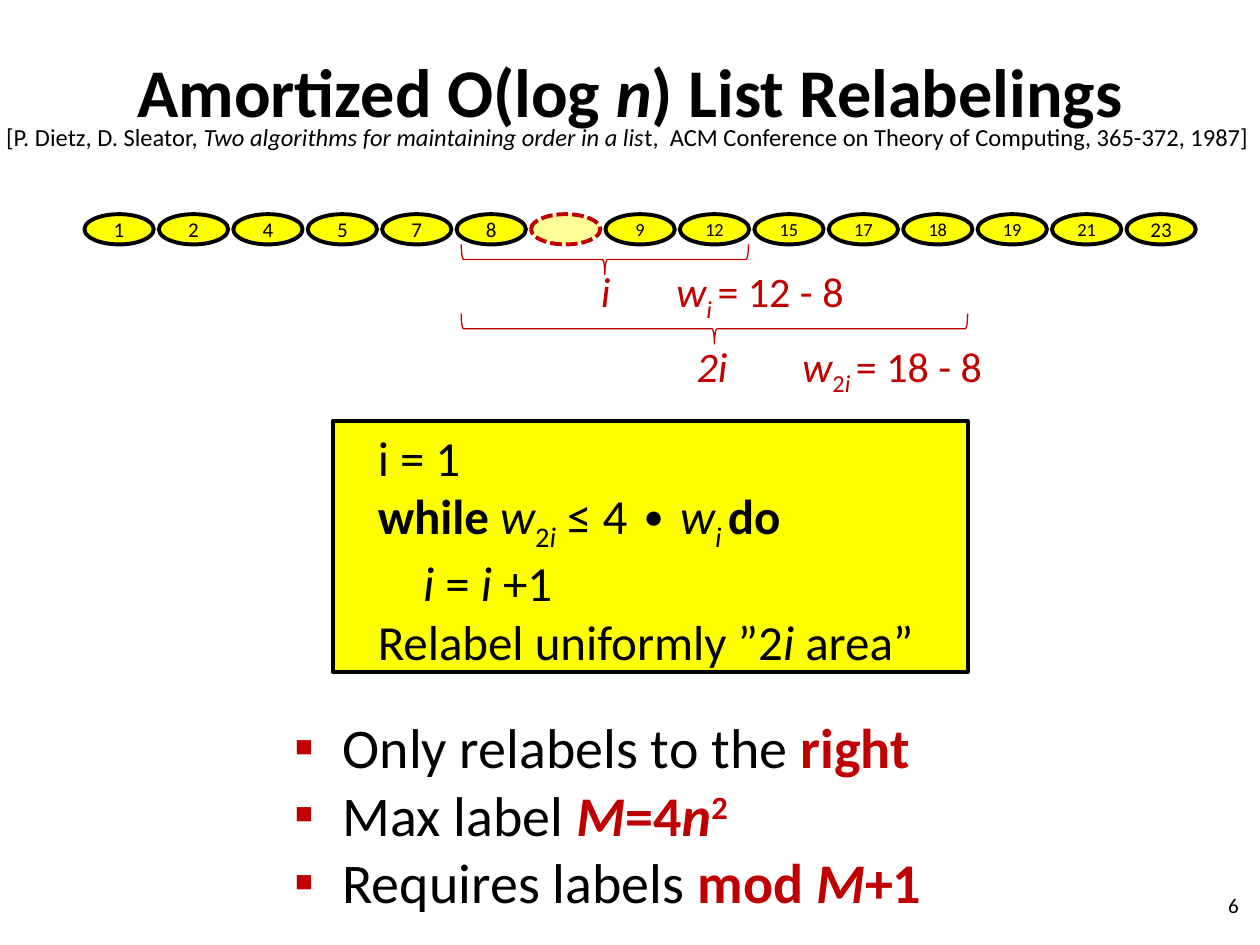
from lxml.etree import SubElement
from pptx import Presentation
from pptx.dml.color import RGBColor
from pptx.enum.dml import MSO_LINE
from pptx.enum.shapes import MSO_SHAPE as SHAPE
from pptx.enum.text import MSO_ANCHOR as ANCHOR, PP_ALIGN as ALIGN
from pptx.oxml.ns import qn
from pptx.util import Inches, Pt

BLACK, RED, YELLOW, PALE = "000000", "C00000", "FFFF00", "FFFF99"

prs = Presentation()
prs.slide_width, prs.slide_height = Inches(10), Inches(7.5)
shapes = prs.slides.add_slide(prs.slide_layouts[6]).shapes


def add_item(box, kind=None, fill=None, line=BLACK, weight=2.25):
    """Add a preset shape, or a text box when no kind is given."""
    box = [Inches(v) for v in box]
    if kind is None:
        sp = shapes.add_textbox(*box)
    else:
        sp = shapes.add_shape(kind, *box)
        sp.shadow.inherit = False
        sp.line.color.rgb = RGBColor.from_string(line)
        sp.line.width = Pt(weight)
        if fill:
            sp.fill.solid()
            sp.fill.fore_color.rgb = RGBColor.from_string(fill)
        else:
            sp.fill.background()
    sp.text_frame.word_wrap = True
    return sp


def write(sp, lines, size, align=ALIGN.LEFT, anchor=ANCHOR.TOP, color=BLACK):
    """Write lines of (text, marks) runs: b bold, i italic, r red, - sub, + super."""
    tf = sp.text_frame
    tf.vertical_anchor = anchor
    for n, runs in enumerate(lines):
        p = tf.add_paragraph() if n else tf.paragraphs[0]
        p.alignment = align
        for text, marks in runs:
            r = p.add_run()
            r.text = text
            r.font.name, r.font.size = "Calibri", Pt(size)
            r.font.bold, r.font.italic = "b" in marks, "i" in marks
            r.font.color.rgb = RGBColor.from_string(RED if "r" in marks else color)
            if "-" in marks or "+" in marks:
                shift = "-25000" if "-" in marks else "30000"
                r.font._element.set("baseline", shift)
    return tf.paragraphs


# Slide number, title and reference
write(add_item((7.6, 6.98, 2.33, 0.4)), [[("6", "")]], 12, ALIGN.RIGHT, ANCHOR.MIDDLE)
write(add_item((0, 0.36, 10, 0.71)),
      [[("Amortized O(log ", "b"), ("n", "bi"), (") List Relabelings", "b")]],
      39, ALIGN.CENTER, ANCHOR.MIDDLE)
write(add_item((-0.16, 0.92, 10.28, 1.26)),
      [[("[P. Dietz, D. Sleator, ", ""),
        ("Two algorithms for maintaining order in a lis", "i"),
        ("t,  ACM Conference on Theory of Computing, 365-372, 1987]", "")]],
      14, ALIGN.CENTER)

# Row of labelled list nodes, with one new node still unlabelled
LEFT, PITCH = 0.67, 8.27 / 14
labels = [1, 2, 4, 5, 7, 8, None, 9, 12, 15, 17, 18, 19, 21, 23]
for col, label in enumerate(labels):
    box = (LEFT + col * PITCH, 1.7, 0.55, 0.24)
    if label is None:
        sp = add_item(box, SHAPE.OVAL, PALE, RED)
        sp.line.dash_style = MSO_LINE.SQUARE_DOT
        continue
    sp = add_item(box, SHAPE.OVAL, YELLOW)
    tf = sp.text_frame
    tf.margin_left = tf.margin_right = tf.margin_top = tf.margin_bottom = 0
    size = 10.5 if 9 <= label <= 21 else 12
    write(sp, [[(str(label), "")]], size, ALIGN.CENTER, ANCHOR.MIDDLE)

# Braces under the node ranges, turned to point down
DEPTH, START = 0.24, 3.66
for width, top in ((2.28, 1.94), (4.02, 2.49)):
    box = (START + (width - DEPTH) / 2, top + (DEPTH - width) / 2, DEPTH, width)
    add_item(box, SHAPE.RIGHT_BRACE, line=RED, weight=0.75).rotation = 90

# Range names and widths, set apart by a tab stop
ranges = [
    ((4.67, 2.06, 2.52, 0.5), 0.6,
     [("i\tw", "i"), ("i ", "i-"), ("= 12 - 8", "")]),
    ((5.43, 2.65, 3.39, 0.5), 0.84,
     [("2i\tw", "i"), ("2", "-"), ("i ", "i-"), ("= 18 - 8", "")]),
]
for box, stop, runs in ranges:
    p = write(add_item(box), [runs], 24, color=RED)[0]
    tabs = SubElement(p._p.get_or_add_pPr(), qn("a:tabLst"))
    SubElement(tabs, qn("a:tab"), pos=str(Inches(stop)), algn="l")

# Relabeling algorithm
code = [
    [("i = 1", "")],
    [("while ", "b"), ("w", "i"), ("2", "-"), ("i", "i-"), (" ≤ 4 ∙ ", ""),
     ("w", "i"), ("i ", "i-"), ("do", "b")],
    [("i", "i"), (" = ", ""), ("i", "i"), (" +1", "")],
    [("Relabel uniformly ”2", ""), ("i ", "i"), ("area”", "")],
]
sp = add_item((2.64, 3.34, 5.04, 1.99), SHAPE.RECTANGLE, YELLOW)
for p, indent in zip(write(sp, code, 28), (0.26, 0.26, 0.62, 0.26)):
    p._p.get_or_add_pPr().set("marL", str(Inches(indent)))

# Properties
points = [
    [("Only relabels to the ", ""), ("right", "br")],
    [("Max label ", ""), ("M", "bir"), ("=4", "br"), ("n", "bir"), ("2", "br+")],
    [("Requires labels ", ""), ("mod ", "br"), ("M", "bir"), ("+1", "br")],
]
for p in write(add_item((2.24, 5.61, 6.22, 2)), points, 32):
    pPr = p._p.get_or_add_pPr()
    pPr.set("marL", str(Inches(0.38)))
    pPr.set("indent", str(Inches(-0.38)))
    SubElement(SubElement(pPr, qn("a:buClr")), qn("a:srgbClr"), val=RED)
    SubElement(pPr, qn("a:buFont"), typeface="Calibri")
    SubElement(pPr, qn("a:buChar"), char="▪")

prs.save("out.pptx")
